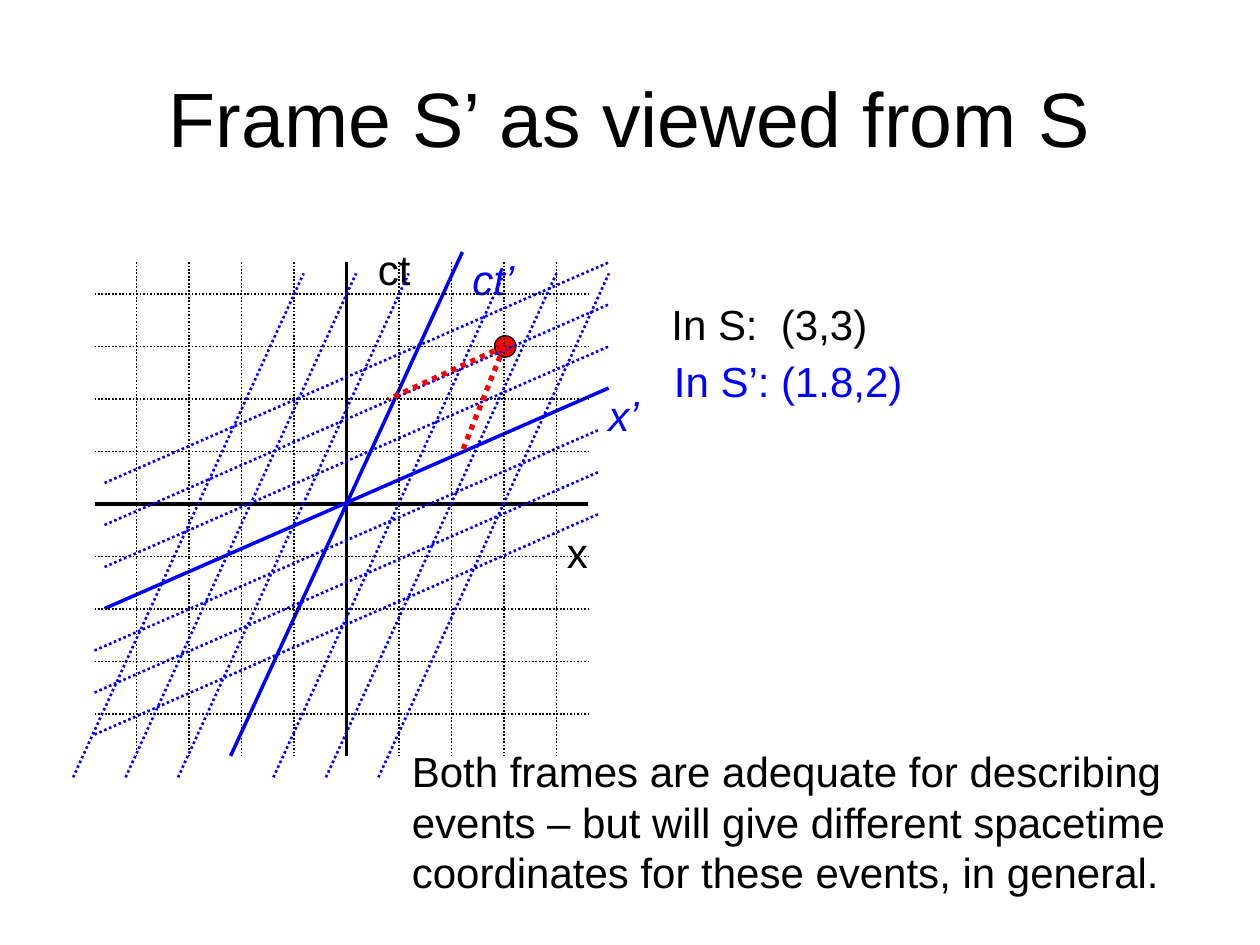
from dataclasses import dataclass

from lxml import etree
from pptx import Presentation
from pptx import util as u
from pptx.dml.color import RGBColor
from pptx.enum import dml, shapes, text
from pptx.oxml.ns import qn

BLACK = RGBColor(0x00, 0x00, 0x00)
BLUE = RGBColor(0x00, 0x00, 0xFF)
RED = RGBColor(0xFF, 0x00, 0x00)
FONT = "Arial"

ORIGIN_X, ORIGIN_Y = 2.75, 4.0
UNIT = 5 / 12
PRIMED_RISE = 1 / 3
LEFT, RIGHT = 0.75, 4.67
TOP, BOTTOM = 2.08, 6.0
STEPS = [step for step in range(-4, 5) if step]


@dataclass(frozen=True)
class Line:
    x1: float
    y1: float
    x2: float
    y2: float


@dataclass(frozen=True)
class Stroke:
    color: RGBColor
    width: float
    dotted: bool = False


@dataclass(frozen=True)
class Label:
    content: str
    left: float
    top: float
    width: float
    height: float = 0.5
    color: RGBColor = BLACK
    italic: bool = False
    wrap: bool = False


def add_run(paragraph, content: str, size: float, color: RGBColor, italic: bool = False) -> None:
    run = paragraph.add_run()
    run.text = content
    run.font.name = FONT
    run.font.size = u.Pt(size)
    run.font.color.rgb = color
    run.font.italic = italic


def draw_line(container, line: Line, stroke: Stroke) -> None:
    connector = container.add_connector(
        shapes.MSO_CONNECTOR.STRAIGHT,
        u.Inches(line.x1), u.Inches(line.y1), u.Inches(line.x2), u.Inches(line.y2),
    )
    connector.line.color.rgb = stroke.color
    connector.line.width = u.Pt(stroke.width)
    if stroke.dotted:
        connector.line.dash_style = dml.MSO_LINE.ROUND_DOT
    etree.SubElement(connector._element.spPr, qn("a:effectLst"))


def draw_group(slide, lines: list[Line], stroke: Stroke):
    group = slide.shapes.add_group_shape()
    for line in lines:
        draw_line(group.shapes, line, stroke)
    return group


def draw_label(container, label: Label) -> None:
    box = container.add_textbox(
        u.Inches(label.left), u.Inches(label.top), u.Inches(label.width), u.Inches(label.height)
    )
    frame = box.text_frame
    frame.word_wrap = label.wrap
    frame.auto_size = text.MSO_AUTO_SIZE.SHAPE_TO_FIT_TEXT
    add_run(frame.paragraphs[0], label.content, 24, label.color, label.italic)


def draw_title(slide, content: str) -> None:
    title = slide.shapes.title
    title.left, title.top = u.Inches(0.5), u.Inches(0.3)
    title.width, title.height = u.Inches(9), u.Inches(1.25)
    title.text_frame.vertical_anchor = text.MSO_ANCHOR.MIDDLE
    paragraph = title.text_frame.paragraphs[0]
    paragraph.alignment = text.PP_ALIGN.CENTER
    add_run(paragraph, content, 44, BLACK)


def draw_event(slide, x: float, y: float, diameter: float) -> None:
    event = slide.shapes.add_shape(
        shapes.MSO_SHAPE.OVAL,
        u.Inches(x - diameter / 2), u.Inches(y - diameter / 2),
        u.Inches(diameter), u.Inches(diameter),
    )
    event.shadow.inherit = False
    event.fill.solid()
    event.fill.fore_color.rgb = RED
    event.line.color.rgb = BLACK
    event.line.width = u.Pt(0.75)


def rest_grid() -> list[Line]:
    columns = [ORIGIN_X + step * UNIT for step in STEPS]
    rows = [ORIGIN_Y + step * UNIT for step in STEPS]
    return [Line(x, TOP, x, BOTTOM) for x in columns] + [Line(LEFT, y, RIGHT, y) for y in rows]


def moving_grid() -> list[Line]:
    time_starts = [first + step * UNIT for first in (2.17, 0.58) for step in range(3)]
    space_starts = [
        (left, first - step * PRIMED_RISE)
        for left, first in ((0.83, 4.5), (0.75, 5.83))
        for step in range(3)
    ]
    return [Line(x, 6.17, x + 1.83, 2.17) for x in time_starts] + [
        Line(x, y, x + 4, y - 1.75) for x, y in space_starts
    ]


def main() -> None:
    presentation = Presentation()
    presentation.slide_width = u.Inches(10)
    presentation.slide_height = u.Inches(7.5)
    slide = presentation.slides.add_slide(presentation.slide_layouts[5])
    draw_title(slide, "Frame S’ as viewed from S")

    rest_axes = [Line(LEFT, ORIGIN_Y, RIGHT, ORIGIN_Y), Line(ORIGIN_X, BOTTOM, ORIGIN_X, TOP)]
    axes = draw_group(slide, rest_axes, Stroke(BLACK, 2))
    draw_label(axes.shapes, Label("x", 4.4, 4.13, 0.37))
    draw_label(axes.shapes, Label("ct", 2.9, 1.88, 0.46))

    primed_axes = [
        (Line(1.83, 6, 3.67, 2), Label("ct’", 3.65, 1.96, 0.53, color=BLUE, italic=True)),
        (Line(0.83, 4.83, 4.83, 3.08), Label("x’", 4.73, 3.04, 0.44, color=BLUE, italic=True)),
    ]
    for axis, label in primed_axes:
        draw_line(slide.shapes, axis, Stroke(BLUE, 2))
        draw_label(slide.shapes, label)

    conclusion = (
        "Both frames are adequate for describing events – but will give different "
        "spacetime coordinates for these events, in general."
    )
    draw_label(slide.shapes, Label(conclusion, 3.17, 5.87, 6.92, 1.3, wrap=True))

    event_x, event_y = ORIGIN_X + 3 * UNIT, ORIGIN_Y - 3 * UNIT
    draw_event(slide, event_x + 0.01, event_y, 0.17)
    draw_group(slide, rest_grid(), Stroke(BLACK, 1, dotted=True))
    draw_group(slide, moving_grid(), Stroke(BLUE, 1.5, dotted=True))

    draw_label(slide.shapes, Label("In S:  (3,3)", 5.23, 2.32, 2.02, 0.57))
    draw_label(slide.shapes, Label("In S’: (1.8,2)", 5.25, 2.77, 2.32, 0.57, color=BLUE))

    projections = [Line(event_x, event_y, x, y) for x, y in ((3.67, 3.58), (3.08, 3.17))]
    draw_group(slide, projections, Stroke(RED, 3, dotted=True))

    presentation.save("out.pptx")


if __name__ == "__main__":
    main()
